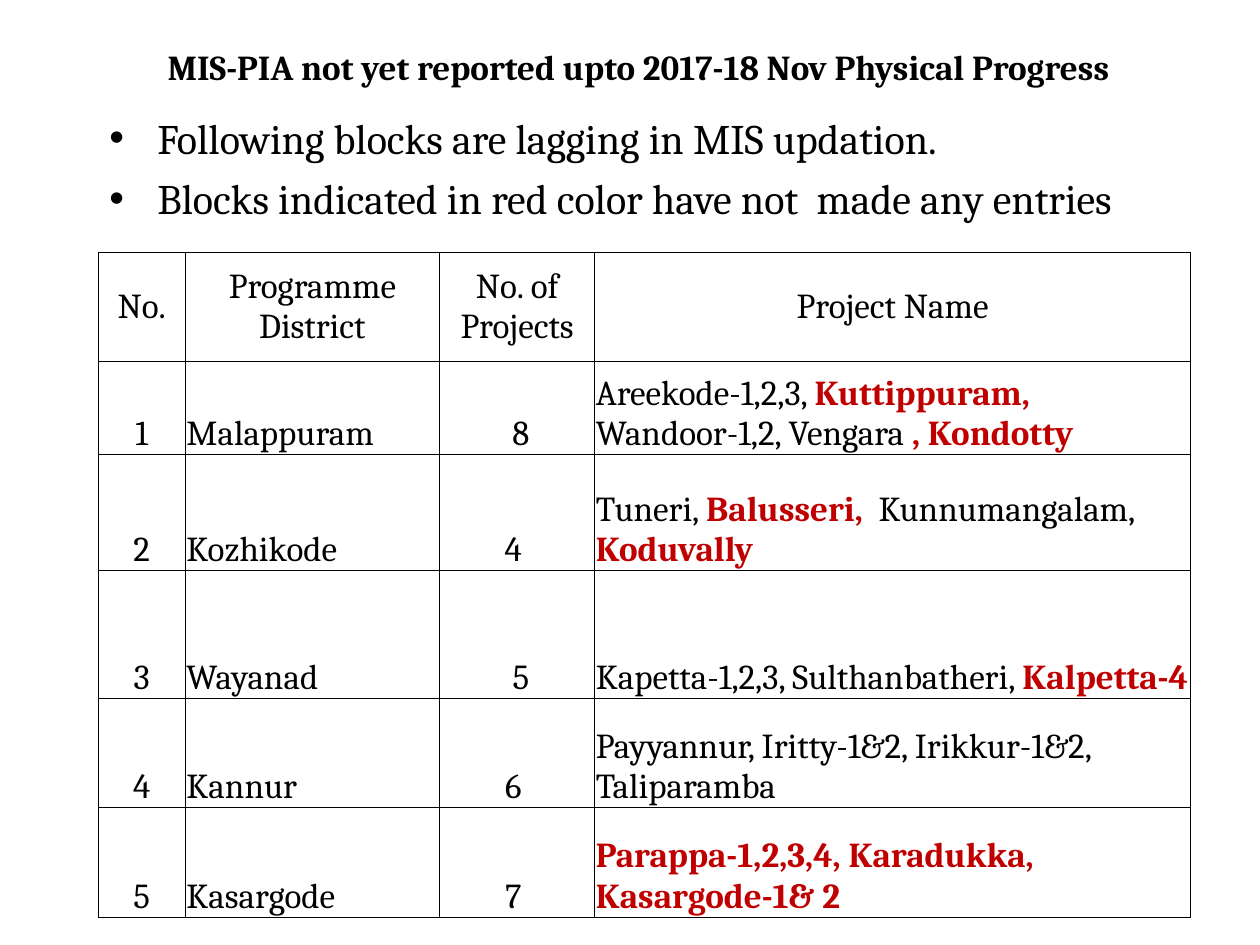
from lxml.etree import SubElement
from pptx import Presentation
from pptx.dml.color import RGBColor
from pptx.enum.text import MSO_ANCHOR, PP_ALIGN
from pptx.oxml.ns import qn
from pptx.util import Inches, Pt

BLACK = RGBColor(0x00, 0x00, 0x00)
RED = RGBColor(0xC0, 0x00, 0x00)
FONT = "Cambria"

TITLE = "MIS-PIA not yet reported upto 2017-18 Nov Physical Progress"
BULLETS = [
    "Following blocks are lagging in MIS updation.",
    "Blocks indicated in red color have not  made any entries",
]
COLUMN_WIDTHS = [0.69, 2.02, 1.23, 4.73]
ROW_HEIGHTS = [0.87, 0.74, 0.92, 1.01, 0.87, 0.87]
CENTRED_COLUMNS = (0, 2)
# Text between asterisks is set in bold red
ROWS = [
    ["No.", "Programme District", "No. of Projects", "Project Name"],
    ["1", "Malappuram", " 8",
     "Areekode-1,2,3, *Kuttippuram,  *Wandoor-1,2, Vengara *, Kondotty*"],
    ["2", "Kozhikode", "4 ", "Tuneri, *Balusseri,  *Kunnumangalam, *Koduvally*"],
    ["3", "Wayanad", " 5", "Kapetta-1,2,3, Sulthanbatheri, *Kalpetta-4*"],
    ["4", "Kannur", "6 ", "Payyannur, Iritty-1&2, Irikkur-1&2, Taliparamba"],
    ["5", "Kasargode", "7 ", "*Parappa-1,2,3,4, Karadukka, Kasargode-1& 2*"],
]


def add_run(p, text, size, color=BLACK, bold=False):
    r = p.add_run()
    r.text = text
    for name, value in {"name": FONT, "size": Pt(size), "bold": bold}.items():
        setattr(r.font, name, value)
    r.font.color.rgb = color


def add_title(s):
    title = s.shapes.title
    box = {"left": 0.53, "top": 0.13, "width": 9.08, "height": 1.09}
    for name, value in box.items():
        setattr(title, name, Inches(value))
    tf = title.text_frame
    tf.vertical_anchor = MSO_ANCHOR.MIDDLE
    tf.margin_bottom = Inches(0.35)  # lifts the line above the middle
    p = tf.paragraphs[0]
    p.alignment = PP_ALIGN.CENTER
    add_run(p, TITLE, 20, bold=True)


def add_bullets(s):
    box = s.shapes.add_textbox(Inches(0.77), Inches(0.84), Inches(9), Inches(1.77))
    tf = box.text_frame
    tf.word_wrap = True
    for i, text in enumerate(BULLETS):
        p = tf.add_paragraph() if i else tf.paragraphs[0]
        p.space_before = Pt(6)
        add_run(p, text, 24)
        pPr = p._p.get_or_add_pPr()
        pPr.set("marL", str(Inches(0.38)))
        pPr.set("indent", str(-Inches(0.38)))
        SubElement(pPr, qn("a:buFont"), typeface="Arial")
        SubElement(pPr, qn("a:buChar"), char="•")


def add_borders(cell):
    tcPr = cell._tc.get_or_add_tcPr()
    for side in ("lnL", "lnR", "lnT", "lnB"):
        ln = SubElement(tcPr, qn(f"a:{side}"), w=str(Pt(0.5)))
        fill = SubElement(ln, qn("a:solidFill"))
        SubElement(fill, qn("a:srgbClr"), val=str(BLACK))


def fill_cell(cell, text, centred, anchor):
    add_borders(cell)
    cell.fill.background()
    margins = {"left": 0.01, "right": 0.01, "top": 0.01, "bottom": 0}
    for side, value in margins.items():
        setattr(cell, f"margin_{side}", Inches(value))
    cell.vertical_anchor = anchor
    p = cell.text_frame.paragraphs[0]
    p.alignment = PP_ALIGN.CENTER if centred else PP_ALIGN.LEFT
    for i, part in enumerate(text.split("*")):
        if part:
            red = i % 2 == 1
            add_run(p, part, 20, RED if red else BLACK, red)


def add_project_table(s):
    frame = s.shapes.add_table(
        len(ROWS), len(COLUMN_WIDTHS), Inches(0.78), Inches(2),
        Inches(sum(COLUMN_WIDTHS)), Inches(sum(ROW_HEIGHTS)))
    table = frame.table
    table.first_row = table.horz_banding = False
    for column, width in zip(table.columns, COLUMN_WIDTHS):
        column.width = Inches(width)
    for r, (texts, height) in enumerate(zip(ROWS, ROW_HEIGHTS)):
        table.rows[r].height = Inches(height)
        header = r == 0
        anchor = MSO_ANCHOR.MIDDLE if header else MSO_ANCHOR.BOTTOM
        for c, text in enumerate(texts):
            fill_cell(table.cell(r, c), text, header or c in CENTRED_COLUMNS, anchor)


def main():
    prs = Presentation()
    prs.slide_width, prs.slide_height = Inches(10), Inches(7.5)
    s = prs.slides.add_slide(prs.slide_layouts[5])  # title only
    add_title(s)
    add_bullets(s)
    add_project_table(s)
    prs.save("out.pptx")


if __name__ == "__main__":
    main()
